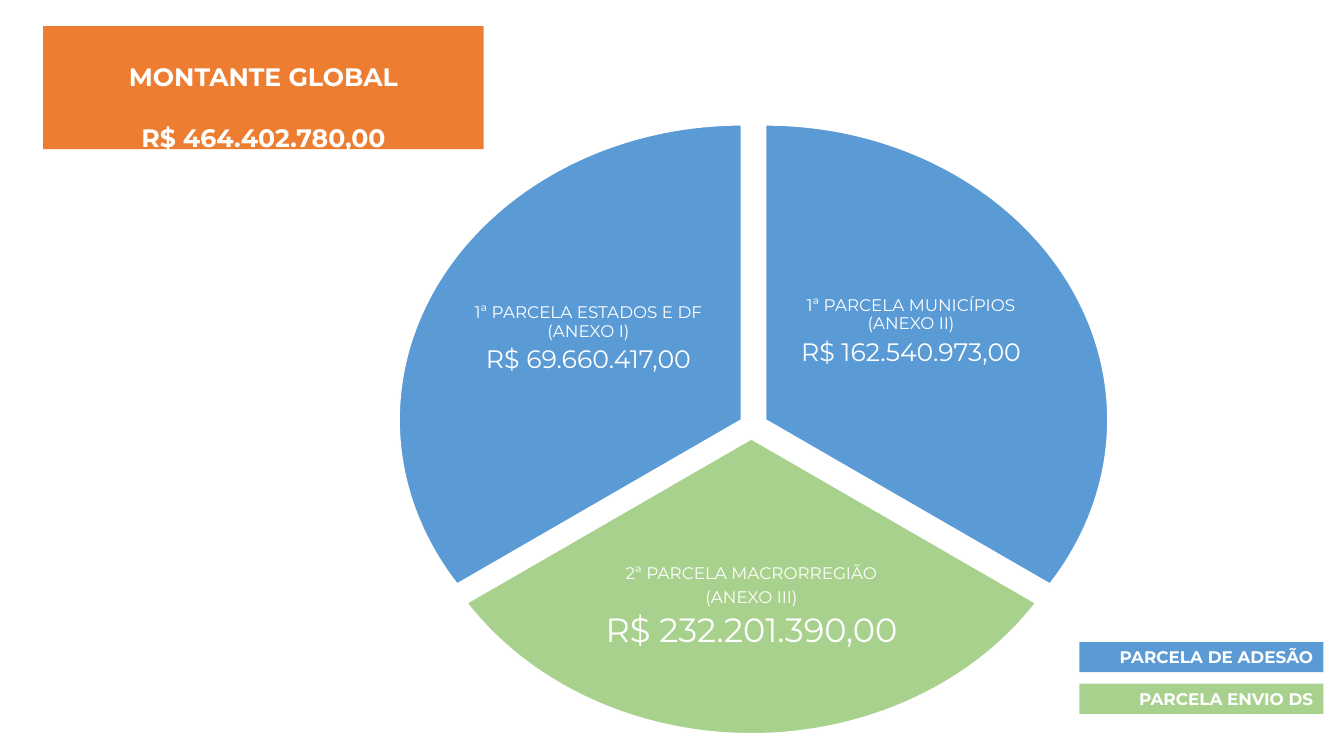
from pptx import Presentation
from pptx.dml.color import RGBColor
from pptx.enum.shapes import MSO_SHAPE
from pptx.enum.text import MSO_ANCHOR, PP_ALIGN
from pptx.util import Cm, Pt

PIE, RECT = MSO_SHAPE.PIE, MSO_SHAPE.RECTANGLE
TOP, MIDDLE = MSO_ANCHOR.TOP, MSO_ANCHOR.MIDDLE
CENTER, RIGHT = PP_ALIGN.CENTER, PP_ALIGN.RIGHT

# Content
FONT = "Montserrat"
WHITE, BLUE, GREEN, ORANGE = "FFFFFF", "5B9BD5", "A9D18E", "ED7D31"
TOTAL = [("MONTANTE GLOBAL", 18), ("R$ 464.402.780,00", 18)]
LEGEND = [("PARCELA DE ADESÃO", BLUE), ("PARCELA ENVIO DS", GREEN)]
SLICES = [
    {"color": BLUE, "corner": (10.67, 3.15), "angles": (270, 30),
     "label_box": (20.04, 5.89, 5.84, 4.95),
     "label": [("1ª PARCELA MUNICÍPIOS (ANEXO II)", 12), ("R$ 162.540.973,00", 18)]},
    {"color": GREEN, "corner": (10.31, 3.63), "angles": (30, 150),
     "label_box": (15.04, 13, 7.8, 4.6),
     "label": [("2ª PARCELA MACRORREGIÃO", 12), ("(ANEXO III)", 12),
               ("R$ 232.201.390,00", 24)]},
    {"color": BLUE, "corner": (10.06, 3.15), "angles": (150, 270),
     "label_box": (11.91, 6.07, 5.84, 4.95),
     "label": [("1ª PARCELA ESTADOS E DF (ANEXO I)", 12), ("R$ 69.660.417,00", 18)]},
]

# Layout in centimetres
PIE_SIZE = (17.25, 14.86)
TOTAL_BOX = (1.09, 0.66, 11.1, 3.1)
LEGEND_LEFT, LEGEND_TOP, LEGEND_PITCH = 27.2, 16.18, 1.05
LEGEND_SIZE = (6.15, 0.76)
LABEL_INSET = 0.05
ADJUSTMENT_PER_DEGREE = 0.6
SPACE_AFTER_RATIO = 0.35


def rgb(color):
    return RGBColor.from_string(color)


def add_filled(kind, box, color):
    shape = slide.shapes.add_shape(kind, *map(Cm, box))
    shape.shadow.inherit = False
    shape.fill.solid()
    shape.fill.fore_color.rgb = rgb(color)
    shape.line.fill.background()
    return shape


def write(frame, lines, align, anchor, bold=False, spacing=1.0, after=0):
    frame.word_wrap = True
    frame.vertical_anchor = anchor
    for index, (words, size) in enumerate(lines):
        paragraph = frame.add_paragraph() if index else frame.paragraphs[0]
        paragraph.text = words
        paragraph_format = {"alignment": align, "line_spacing": spacing,
                            "space_after": Pt(size * after)}
        for name, value in paragraph_format.items():
            setattr(paragraph, name, value)
        font = paragraph.runs[0].font
        for name, value in {"name": FONT, "size": Pt(size), "bold": bold}.items():
            setattr(font, name, value)
        font.color.rgb = rgb(WHITE)


presentation = Presentation()
presentation.slide_width, presentation.slide_height = Cm(33.87), Cm(19.05)
slide = presentation.slides.add_slide(presentation.slide_layouts[6])

# Pie slices and their labels
for part in SLICES:
    wedge = add_filled(PIE, part["corner"] + PIE_SIZE, part["color"])
    wedge.line.color.rgb = rgb(WHITE)
    wedge.line.width = Pt(1)
    for index, angle in enumerate(part["angles"]):
        wedge.adjustments[index] = angle * ADJUSTMENT_PER_DEGREE
    frame = slide.shapes.add_textbox(*map(Cm, part["label_box"])).text_frame
    for side in ("left", "top", "right", "bottom"):
        setattr(frame, "margin_" + side, Cm(LABEL_INSET))
    write(frame, part["label"], CENTER, MIDDLE, spacing=0.9, after=SPACE_AFTER_RATIO)

# Legend
for row, (caption, color) in enumerate(LEGEND):
    box = (LEGEND_LEFT, LEGEND_TOP + row * LEGEND_PITCH) + LEGEND_SIZE
    write(add_filled(RECT, box, color).text_frame, [(caption, 12)], RIGHT, MIDDLE, bold=True)

# Overall amount
write(add_filled(RECT, TOTAL_BOX, ORANGE).text_frame, TOTAL, CENTER, TOP, bold=True, spacing=2.0)

presentation.save("out.pptx")
